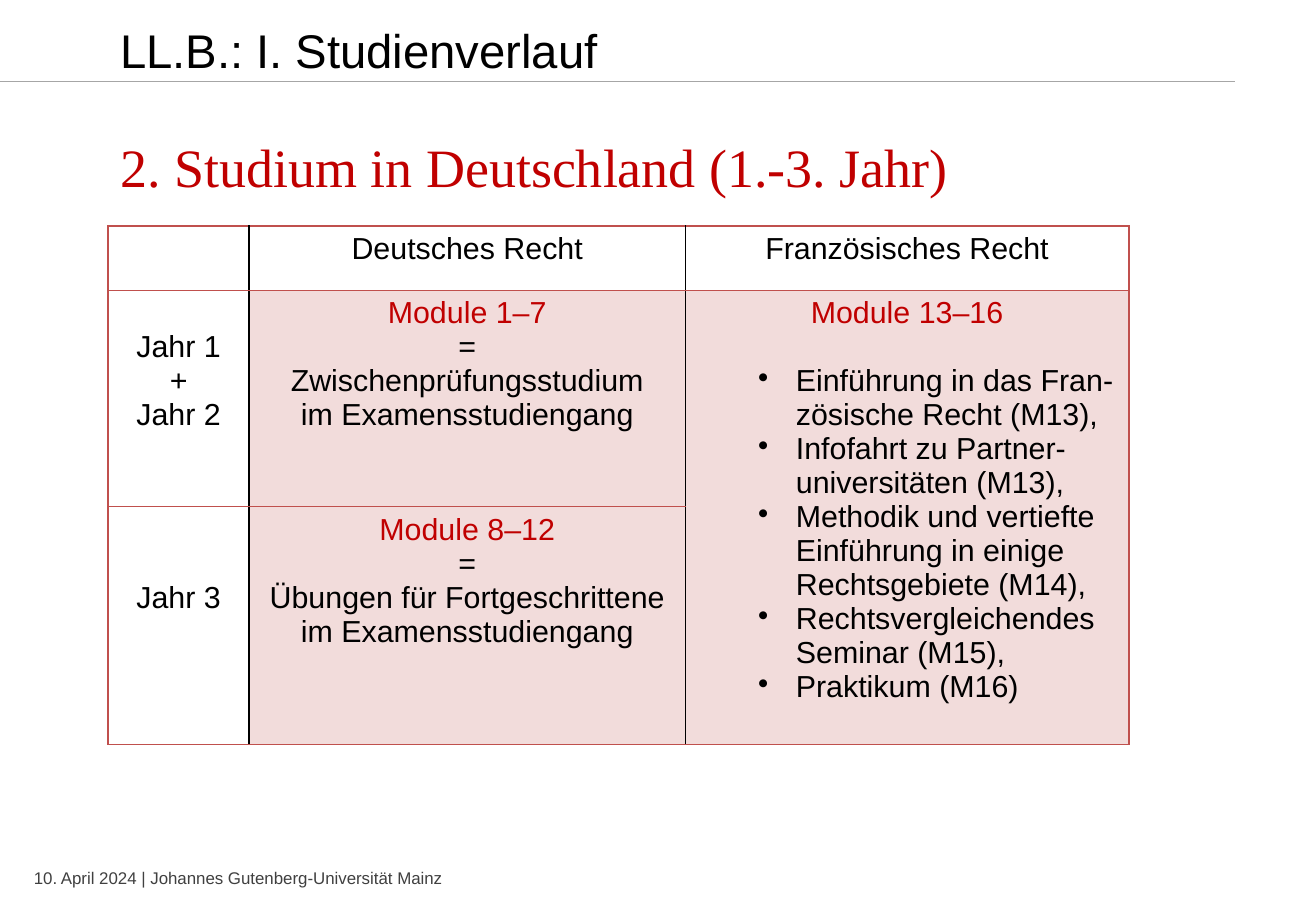
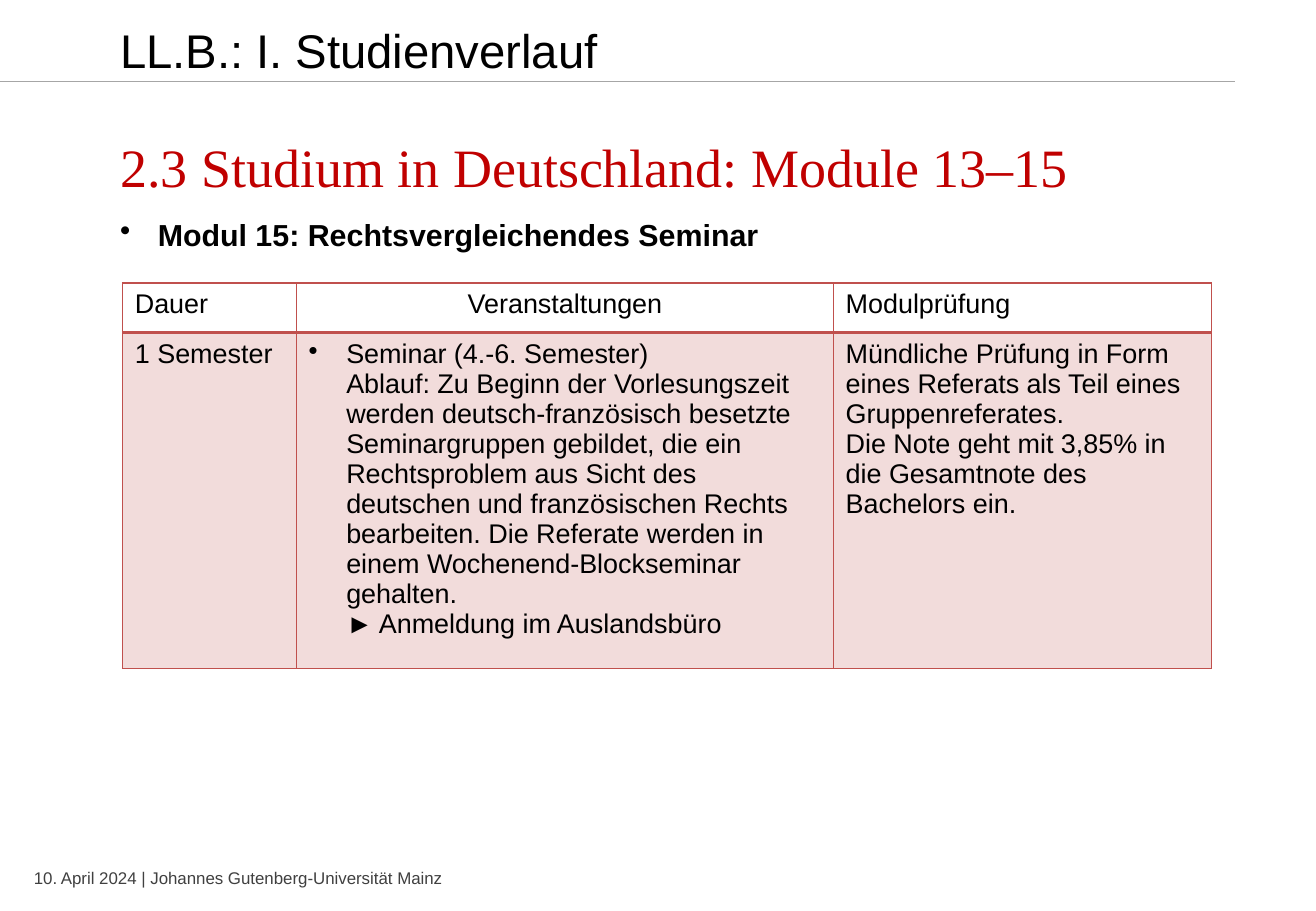
from dataclasses import dataclass
from typing import Any, Optional

import pptx
import pptx.dml.color
import pptx.enum.shapes
import pptx.enum.text
import pptx.oxml
import pptx.oxml.ns
import pptx.util
from pptx.util import Inches, Pt

RGBColor = pptx.dml.color.RGBColor
Align = pptx.enum.text.PP_ALIGN

BLACK = RGBColor(0x00, 0x00, 0x00)
WHITE = RGBColor(0xFF, 0xFF, 0xFF)
RED = RGBColor(0xC0, 0x00, 0x00)
BORDER_RED = RGBColor(0xC0, 0x50, 0x4D)
PINK = RGBColor(0xF2, 0xDC, 0xDB)
RULE_GREY = RGBColor(0xA6, 0xA6, 0xA6)
FOOTER_GREY = RGBColor(0x40, 0x40, 0x40)

SECTION = "LL.B.: I. Studienverlauf"
FOOTER = "10. April 2024 | Johannes Gutenberg-Universität Mainz"

SECTION_FONT = {"name": "Arial", "size": Pt(28)}
HEADING_FONT = {"name": "Times New Roman", "size": Pt(32)}
FOOTER_FONT = {"name": "Arial", "size": Pt(10)}
TOPIC_FONT = {"name": "Arial", "size": Pt(18), "bold": True}
PLAN_FONT = {"name": "Arial", "size": Pt(18)}
MODULE_FONT = {"name": "Arial", "size": Pt(16)}

HANGING = 0.31


@dataclass
class Line:
    text: str
    color: RGBColor = BLACK
    align: Any = Align.LEFT
    bullet: bool = False
    indent: float = 0
    gap_before: float = 0


@dataclass
class Cell:
    lines: list[Line]
    fill: RGBColor = WHITE
    top: float = 0.05


@dataclass
class Grid:
    left: float
    top: float
    columns: list[float]
    rows: list[float]
    cells: list[list[Cell]]
    font: dict[str, Any]
    inner_color: RGBColor = BORDER_RED
    header_rule: float = 1
    merge: Optional[tuple[int, int, int, int]] = None


def set_all(target: Any, values: dict[str, Any]) -> None:
    for name, value in values.items():
        setattr(target, name, value)


def write_lines(frame: Any, lines: list[Line], font: dict[str, Any]) -> None:
    for index, line in enumerate(lines):
        paragraph = frame.paragraphs[0] if index == 0 else frame.add_paragraph()
        paragraph.alignment = line.align
        if line.gap_before:
            paragraph.space_before = Pt(line.gap_before)
        properties = paragraph._p.get_or_add_pPr()
        properties.set("marL", str(Inches(line.indent)))
        properties.set("indent", str(Inches(-HANGING if line.bullet else 0)))
        if line.bullet:
            bullet = properties.makeelement(pptx.oxml.ns.qn("a:buChar"), {"char": "•"})
            properties.append(bullet)
        run = paragraph.add_run()
        run.text = line.text
        set_all(run.font, font)
        run.font.color.rgb = line.color


def add_text(slide: Any, place: tuple[float, ...], line: Line, font: dict[str, Any]) -> None:
    frame = slide.shapes.add_textbox(*map(Inches, place)).text_frame
    frame.word_wrap = True
    write_lines(frame, [line], font)


def add_border(cell: Any, side: str, color: RGBColor, width: float) -> None:
    cell._tc.get_or_add_tcPr().append(pptx.oxml.parse_xml(
        f'<a:ln{side} {pptx.oxml.ns.nsdecls("a")} w="{Pt(width)}">'
        f'<a:solidFill><a:srgbClr val="{color}"/></a:solidFill></a:ln{side}>'))


def add_grid(slide: Any, grid: Grid) -> None:
    shape = slide.shapes.add_table(
        len(grid.rows), len(grid.columns), Inches(grid.left), Inches(grid.top),
        Inches(sum(grid.columns)), Inches(sum(grid.rows)))
    table = shape.table
    set_all(table, {"first_row": False, "horz_banding": False})
    for column, width in zip(table.columns, grid.columns):
        column.width = Inches(width)
    for row, height in zip(table.rows, grid.rows):
        row.height = Inches(height)

    last = len(grid.columns) - 1
    for r, row_cells in enumerate(grid.cells):
        for c, content in enumerate(row_cells):
            cell = table.cell(r, c)
            cell.margin_top = Inches(content.top)
            # Borders come before the fill in the cell properties
            add_border(cell, "L", BORDER_RED if c == 0 else grid.inner_color, 1)
            add_border(cell, "R", BORDER_RED if c == last else grid.inner_color, 1)
            add_border(cell, "T", BORDER_RED, grid.header_rule if r == 1 else 1)
            add_border(cell, "B", BORDER_RED, grid.header_rule if r == 0 else 1)
            cell.fill.solid()
            cell.fill.fore_color.rgb = content.fill
            write_lines(cell.text_frame, content.lines, grid.font)
    if grid.merge:
        top, left, bottom, right = grid.merge
        table.cell(top, left).merge(table.cell(bottom, right))


def add_page(deck: Any, heading: str) -> Any:
    """Add a slide with footer, rule, section name and heading."""
    slide = deck.slides.add_slide(deck.slide_layouts[6])
    add_text(slide, (0.18, 7.09, 5.15, 0.33), Line(FOOTER, FOOTER_GREY), FOOTER_FONT)
    rule = slide.shapes.add_connector(
        pptx.enum.shapes.MSO_CONNECTOR.STRAIGHT,
        Inches(0), Inches(0.67), Inches(10.16), Inches(0.67))
    rule.line.color.rgb = RULE_GREY
    rule.line.width = Pt(0.75)
    effects = rule._element.spPr
    effects.append(effects.makeelement(pptx.oxml.ns.qn("a:effectLst"), {}))
    add_text(slide, (0.89, 0.13, 8.62, 0.6), Line(SECTION), SECTION_FONT)
    add_text(slide, (0.89, 1.05, 8.4, 0.65), Line(heading, RED), HEADING_FONT)
    return slide


def centered(*texts: str) -> list[Line]:
    return [Line(text, align=Align.CENTER) for text in texts]


def module_title(text: str) -> Line:
    return Line(text, RED, Align.CENTER)


def plan_grid() -> Grid:
    topics = [
        "Einführung in das Fran-zösische Recht (M13),",
        "Infofahrt zu Partner- universitäten (M13),",
        "Methodik und vertiefte Einführung in einige Rechtsgebiete (M14),",
        "Rechtsvergleichendes Seminar (M15),",
        "Praktikum (M16)",
    ]
    french_law = [module_title("Module 13–16")] + [
        Line(topic, bullet=True, indent=0.81, gap_before=0 if index else 20)
        for index, topic in enumerate(topics)]
    basic_study = [module_title("Module 1–7")] + centered(
        "=", "Zwischenprüfungsstudium", "im Examensstudiengang")
    advanced_study = [module_title("Module 8–12")] + centered(
        "=", "Übungen für Fortgeschrittene im Examensstudiengang")
    return Grid(
        0.89, 1.86, [1.16, 3.59, 3.65], [0.53, 1.78, 1.96],
        [[Cell([]), Cell(centered("Deutsches Recht")), Cell(centered("Französisches Recht"))],
         [Cell(centered("Jahr 1", "+", "Jahr 2"), top=0.33),
          Cell(basic_study, PINK), Cell(french_law, PINK)],
         [Cell(centered("Jahr 3"), top=0.61), Cell(advanced_study, PINK), Cell([], PINK)]],
        PLAN_FONT, inner_color=BLACK, merge=(1, 2, 2, 2))


def seminar_grid() -> Grid:
    seminar = [
        Line("Seminar (4.-6. Semester)", bullet=True, indent=HANGING),
        Line("Ablauf: Zu Beginn der Vorlesungszeit werden deutsch-französisch besetzte "
             "Seminargruppen gebildet, die ein Rechtsproblem aus Sicht des deutschen und "
             "französischen Rechts bearbeiten. Die Referate werden in einem "
             "Wochenend-Blockseminar gehalten.", indent=HANGING),
        Line("► Anmeldung im Auslandsbüro", indent=HANGING),
    ]
    exam = [
        Line("Mündliche Prüfung in Form eines Referats als Teil eines Gruppenreferates."),
        Line("Die Note geht mit 3,85% in die Gesamtnote des Bachelors ein."),
    ]
    return Grid(
        1.01, 2.33, [1.43, 4.42, 3.11], [0.41, 2.57],
        [[Cell([Line("Dauer")]), Cell(centered("Veranstaltungen")),
          Cell([Line("Modulprüfung")])],
         [Cell([Line("1 Semester")], PINK), Cell(seminar, PINK), Cell(exam, PINK)]],
        MODULE_FONT, header_rule=2)


def main() -> None:
    deck = pptx.Presentation()
    set_all(deck, {"slide_width": Inches(10.83), "slide_height": Inches(7.5)})

    # Course plan for years 1 to 3
    plan = add_page(deck, "2. Studium in Deutschland (1.-3. Jahr)")
    add_grid(plan, plan_grid())

    # Module 15 in detail
    module = add_page(deck, "2.3 Studium in Deutschland: Module 13–15")
    add_text(module, (0.89, 1.73, 8.15, 0.4),
             Line("Modul 15: Rechtsvergleichendes Seminar", bullet=True, indent=HANGING),
             TOPIC_FONT)
    add_grid(module, seminar_grid())

    deck.save("out.pptx")


if __name__ == "__main__":
    main()
